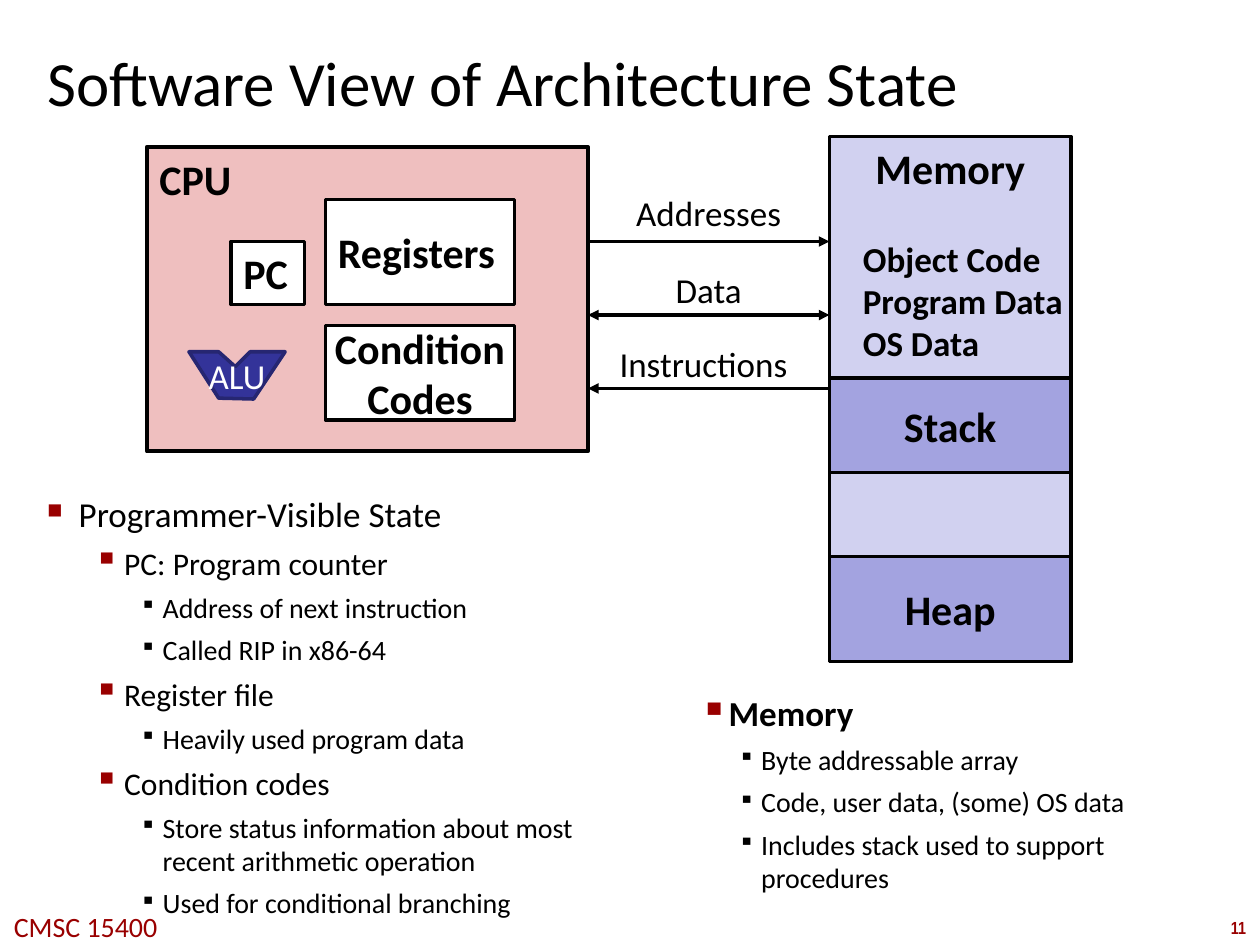
import pptx
import pptx.dml.color
import pptx.enum.shapes
import pptx.enum.text
import pptx.oxml.ns
import pptx.util
from lxml import etree

Pt = pptx.util.Pt
RGBColor = pptx.dml.color.RGBColor
ALIGN = pptx.enum.text.PP_ALIGN
ANCHOR = pptx.enum.text.MSO_ANCHOR

BLACK = RGBColor(0x00, 0x00, 0x00)
WHITE = RGBColor(0xFF, 0xFF, 0xFF)
CRIMSON = RGBColor(0x99, 0x00, 0x00)
PINK = RGBColor(0xEF, 0xBF, 0xBF)
LILAC = RGBColor(0xD1, 0xD1, 0xF0)
VIOLET = RGBColor(0xA3, 0xA3, 0xE0)
INDIGO = RGBColor(0x33, 0x33, 0x99)
DARK_INDIGO = RGBColor(0x26, 0x26, 0x71)

BUS_LEFT, BUS_RIGHT = 336, 474
MEMORY_WIDTH = 138

STATE_ITEMS = [
    (0, "Programmer-Visible State"),
    (1, "PC: Program counter"),
    (2, "Address of next instruction"),
    (2, "Called RIP in x86-64"),
    (1, "Register file"),
    (2, "Heavily used program data"),
    (1, "Condition codes"),
    (2, "Store status information about most recent arithmetic operation"),
    (2, "Used for conditional branching"),
]
STATE_STYLES = {
    0: (18, -18, "■", CRIMSON, 60, 20, False),
    1: (44, -17.3, "▪", CRIMSON, 110, 18, False),
    2: (66, -13, "▪", BLACK, 80, 16, False),
}
MEMORY_ITEMS = [
    (1, "Memory"),
    (2, "Byte addressable array"),
    (2, "Code, user data, (some) OS data"),
    (2, "Includes stack used to support procedures"),
]
MEMORY_STYLES = {
    1: (23, -13.5, "▪", CRIMSON, 110, 20, True),
    2: (44.6, -13, "▪", BLACK, 80, 16, False),
}


def add_element(parent, tag, **attributes):
    return etree.SubElement(parent, pptx.oxml.ns.qn(tag), attributes)


def add_span(para, text, size, color=BLACK, bold=False, font="Calibri"):
    span = para.add_run()
    span.text = text
    span.font.name = font
    span.font.size = Pt(size)
    span.font.bold = bold
    span.font.color.rgb = color


def paragraph_at(frame, index):
    return frame.paragraphs[0] if index == 0 else frame.add_paragraph()


def write_lines(frame, lines, size, align=ALIGN.LEFT, **style):
    for index, line in enumerate(lines):
        para = paragraph_at(frame, index)
        para.alignment = align
        add_span(para, line, size, **style)


def set_frame(frame, anchor, wrap, inset=None):
    frame.vertical_anchor = anchor
    frame.word_wrap = wrap
    if inset is not None:
        frame.margin_left = frame.margin_right = Pt(inset)
        frame.margin_top = frame.margin_bottom = Pt(inset)


def add_text(page, place, lines, size, align=ALIGN.LEFT, anchor=ANCHOR.TOP,
             wrap=True, inset=None, **style):
    box = page.shapes.add_textbox(*map(Pt, place))
    set_frame(box.text_frame, anchor, wrap, inset)
    write_lines(box.text_frame, lines, size, align, **style)


def paint(shape, fill, line, width):
    shape.shadow.inherit = False
    shape.fill.solid()
    shape.fill.fore_color.rgb = fill
    shape.line.color.rgb = line
    shape.line.width = Pt(width)


def add_block(page, place, fill, lines, align=ALIGN.CENTER,
              anchor=ANCHOR.MIDDLE, line_width=2):
    block = page.shapes.add_shape(
        pptx.enum.shapes.MSO_SHAPE.RECTANGLE, *map(Pt, place))
    paint(block, fill, BLACK, line_width)
    set_frame(block.text_frame, anchor, False)
    write_lines(block.text_frame, lines, 24, align, bold=True)


def add_arrow(page, y, ends):
    arrow = page.shapes.add_connector(
        pptx.enum.shapes.MSO_CONNECTOR.STRAIGHT,
        Pt(BUS_LEFT), Pt(y), Pt(BUS_RIGHT), Pt(y))
    arrow.line.color.rgb = BLACK
    arrow.line.width = Pt(2)
    line = arrow.line._get_or_add_ln()
    for end in ends:
        add_element(line, end, type="triangle")
    add_element(arrow._element.spPr, "a:effectLst")


def add_alu(page):
    corners = [(125, 227.5), (145, 228), (163, 201), (143, 201),
               (134.5, 209.5), (125, 201), (108, 201)]
    builder = page.shapes.build_freeform(Pt(108), Pt(201))
    builder.add_line_segments([(Pt(x), Pt(y)) for x, y in corners], close=True)
    alu = builder.convert_to_shape()
    paint(alu, INDIGO, DARK_INDIGO, 2)
    set_frame(alu.text_frame, ANCHOR.MIDDLE, True)
    write_lines(alu.text_frame, ["ALU"], 20, ALIGN.CENTER, color=WHITE)


def add_bullets(page, place, items, styles):
    box = page.shapes.add_textbox(*map(Pt, place))
    set_frame(box.text_frame, ANCHOR.TOP, True, 3)
    for index, (level, text) in enumerate(items):
        margin, indent, mark, color, percent, size, bold = styles[level]
        para = paragraph_at(box.text_frame, index)
        para.level = level
        properties = para._p.get_or_add_pPr()
        properties.set("marL", str(Pt(margin)))
        properties.set("indent", str(Pt(indent)))
        bullet_color = add_element(properties, "a:buClr")
        add_element(bullet_color, "a:srgbClr", val=str(color))
        add_element(properties, "a:buSzPct", val=str(percent * 1000))
        add_element(properties, "a:buChar", char=mark)
        if index > 0:
            para.space_before = Pt(5)
        add_span(para, text, size, bold=bold)


def add_cpu(page):
    add_block(page, (84, 84, 252, 174), PINK, ["CPU"],
              ALIGN.LEFT, ANCHOR.TOP, 2.25)
    add_block(page, (132, 138, 42, 36), WHITE, ["PC"], ALIGN.LEFT)
    add_block(page, (186, 114, 108, 60), WHITE, ["Registers"], ALIGN.LEFT)
    add_block(page, (186, 186, 108, 54), WHITE, ["Condition", "Codes"])
    add_alu(page)


def add_memory(page):
    add_block(page, (BUS_RIGHT, 78, MEMORY_WIDTH, 300), LILAC, ["Memory"],
              anchor=ANCHOR.TOP)
    add_text(page, (486, 132, MEMORY_WIDTH, 80),
             ["Object Code", "Program Data", "OS Data"], 20, bold=True)
    add_block(page, (BUS_RIGHT, 216, MEMORY_WIDTH, 54), VIOLET, ["Stack"])
    add_block(page, (BUS_RIGHT, 318, MEMORY_WIDTH, 60), VIOLET, ["Heap"])


def add_buses(page):
    buses = [
        ("Addresses", 106, 138, 138, ["a:tailEnd"]),
        ("Data", 150, 138, 180, ["a:headEnd", "a:tailEnd"]),
        ("Instructions", 192, 132, 222, ["a:headEnd"]),
    ]
    for label, top, width, y, ends in buses:
        add_text(page, (BUS_LEFT, top, width, 31), [label], 20, ALIGN.CENTER)
        add_arrow(page, y, ends)


def main():
    deck = pptx.Presentation()
    deck.slide_width, deck.slide_height = Pt(720), Pt(540)
    page = deck.slides.add_slide(deck.slide_layouts[6])
    add_text(page, (24, 24, 569, 45), ["Software View of Architecture State"],
             36, anchor=ANCHOR.MIDDLE, inset=3)
    add_cpu(page)
    add_memory(page)
    add_buses(page)
    add_bullets(page, (24, 278.6, 343.4, 243.4), STATE_ITEMS, STATE_STYLES)
    add_bullets(page, (387.4, 392.4, 321, 124), MEMORY_ITEMS, MEMORY_STYLES)
    add_text(page, (-2, 516.2, 102, 26.6), ["CMSC 15400"], 16, ALIGN.CENTER,
             wrap=False, color=CRIMSON)
    add_text(page, (695.5, 520.6, 24.5, 19.4), ["11"], 10, ALIGN.CENTER,
             wrap=False, color=CRIMSON, bold=True, font="Arial Narrow")
    deck.save("out.pptx")


if __name__ == "__main__":
    main()
